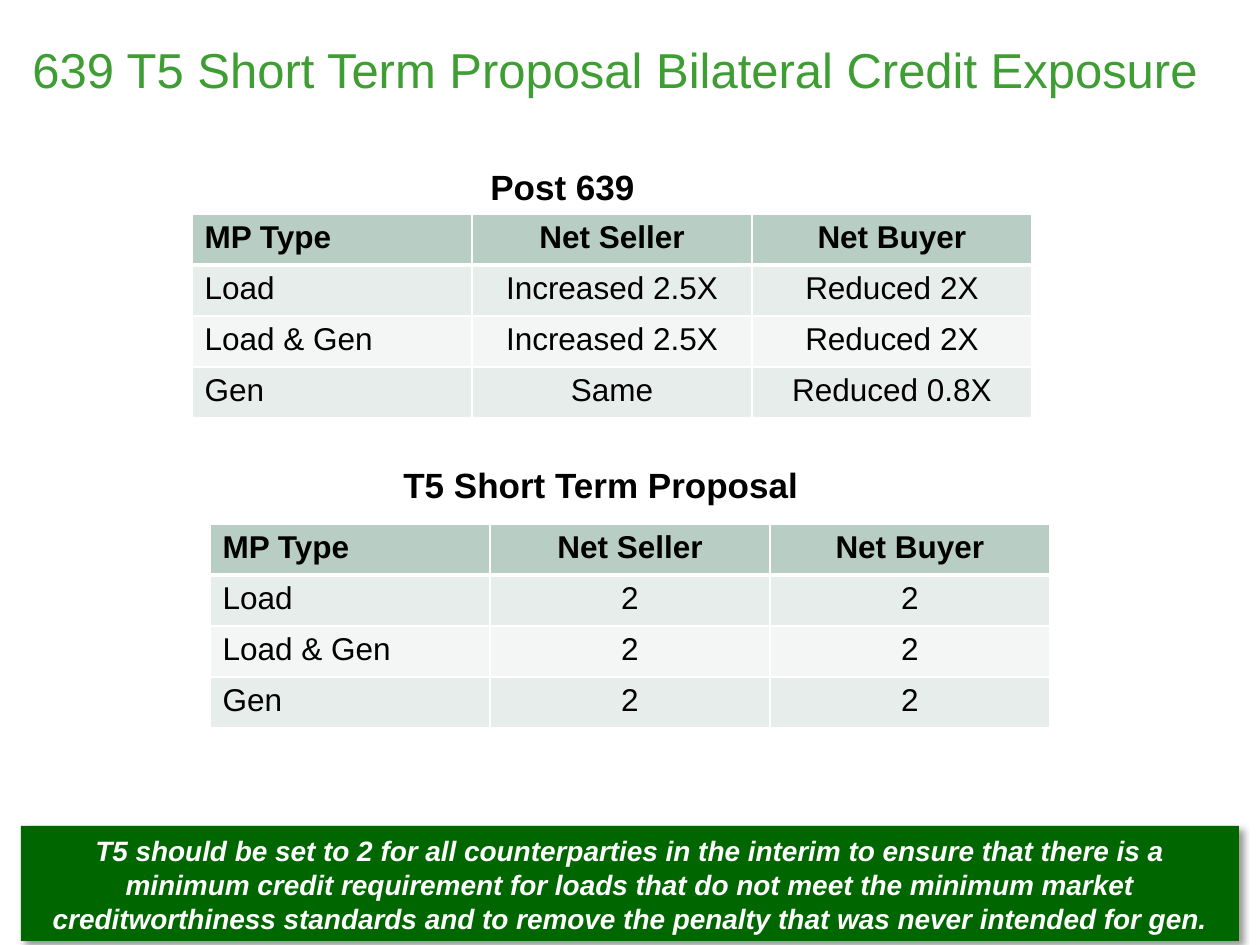
from lxml import etree
from pptx import Presentation
from pptx.dml.color import RGBColor
from pptx.enum import shapes, text
from pptx.oxml import parse_xml
from pptx.oxml.ns import nsdecls, qn
from pptx.util import Emu, Pt

SCALE = 914400 / 126
LEFT, CENTER = text.PP_ALIGN.LEFT, text.PP_ALIGN.CENTER

HEADER = ("MP Type", "Net Seller", "Net Buyer")
LABELS = [
    ("639 T5 Short Term Proposal Bilateral Credit Exposure", (20, 33, 1223, 72),
     dict(size=28, color="3E9D33")),
    ("Post 639", (478, 159, 237, 55), dict(size=20, color="000000", bold=True)),
    ("T5 Short Term Proposal", (391, 457, 527, 55),
     dict(size=20, color="000000", bold=True)),
]
TABLES = [
    ((192, 214), [
        HEADER,
        ("Load", "Increased 2.5X", "Reduced 2X"),
        ("Load & Gen", "Increased 2.5X", "Reduced 2X"),
        ("Gen", "Same", "Reduced 0.8X"),
    ]),
    ((210, 524), [
        HEADER,
        ("Load", "2", "2"),
        ("Load & Gen", "2", "2"),
        ("Gen", "2", "2"),
    ]),
]
COLUMN, ROW = 280, 51
HEADER_FILL, BANDS = "B8CEC4", ("F3F6F5", "E6EDEA")
BANNER = (
    "T5 should be set to 2 for all counterparties in the interim to ensure that "
    "there is a minimum credit requirement for loads that do not meet the minimum "
    "market creditworthiness standards and to remove the penalty that was never "
    "intended for gen."
)
BANNER_BOX = (21, 826, 1218, 115)
SHADOW = (
    f'<a:outerShdw {nsdecls("a")} blurRad="50800" dist="38100" dir="2700000" '
    'algn="tl" rotWithShape="0"><a:srgbClr val="000000">'
    '<a:alpha val="40000"/></a:srgbClr></a:outerShdw>'
)


def px(n):
    return Emu(round(n * SCALE))


def rgb(value):
    return RGBColor.from_string(value)


def write(tf, content, size, color, align=LEFT, **formats):
    p = tf.paragraphs[0]
    p.alignment = align
    r = p.add_run()
    r.text = content
    r.font.color.rgb = rgb(color)
    for name, value in dict(name="Arial", size=Pt(size), **formats).items():
        setattr(r.font, name, value)


def add_borders(cell, header):
    tc_pr = cell._tc.get_or_add_tcPr()
    widths = dict(lnL=1, lnR=1, lnT=1, lnB=3 if header else 1)
    for i, (side, width) in enumerate(widths.items()):
        ln = etree.Element(qn(f"a:{side}"), w=str(Pt(width)))
        fill = etree.SubElement(ln, qn("a:solidFill"))
        etree.SubElement(fill, qn("a:srgbClr"), val="FFFFFF")
        tc_pr.insert(i, ln)


def add_table(s, origin, rows):
    size = COLUMN * len(rows[0]), ROW * len(rows)
    table = s.shapes.add_table(len(rows), len(rows[0]), *map(px, origin + size)).table
    for column in table.columns:
        column.width = px(COLUMN)
    for i, row in enumerate(rows):
        table.rows[i].height = px(ROW)
        for j, content in enumerate(row):
            cell = table.cell(i, j)
            cell.fill.solid()
            cell.fill.fore_color.rgb = rgb(BANDS[i % 2] if i else HEADER_FILL)
            write(cell.text_frame, content, 18, "000000",
                  CENTER if j else LEFT, bold=i == 0)
            add_borders(cell, i == 0)


def add_banner(s):
    sp = s.shapes.add_shape(shapes.MSO_SHAPE.RECTANGLE, *map(px, BANNER_BOX))
    sp.fill.solid()
    sp.fill.fore_color.rgb = rgb("006600")
    sp.line.fill.background()
    sp.shadow.inherit = False
    sp._element.spPr.find(qn("a:effectLst")).append(parse_xml(SHADOW))
    sp.text_frame.word_wrap = True
    sp.text_frame.vertical_anchor = text.MSO_ANCHOR.BOTTOM
    write(sp.text_frame, BANNER, 16, "FFFFFF", CENTER, bold=True, italic=True)


def main():
    prs = Presentation()
    prs.slide_width, prs.slide_height = px(1260), px(945)
    s = prs.slides.add_slide(prs.slide_layouts[6])
    for content, box, formats in LABELS:
        tf = s.shapes.add_textbox(*map(px, box)).text_frame
        tf.word_wrap = True
        write(tf, content, **formats)
    for origin, rows in TABLES:
        add_table(s, origin, rows)
    add_banner(s)
    prs.save("out.pptx")


if __name__ == "__main__":
    main()
